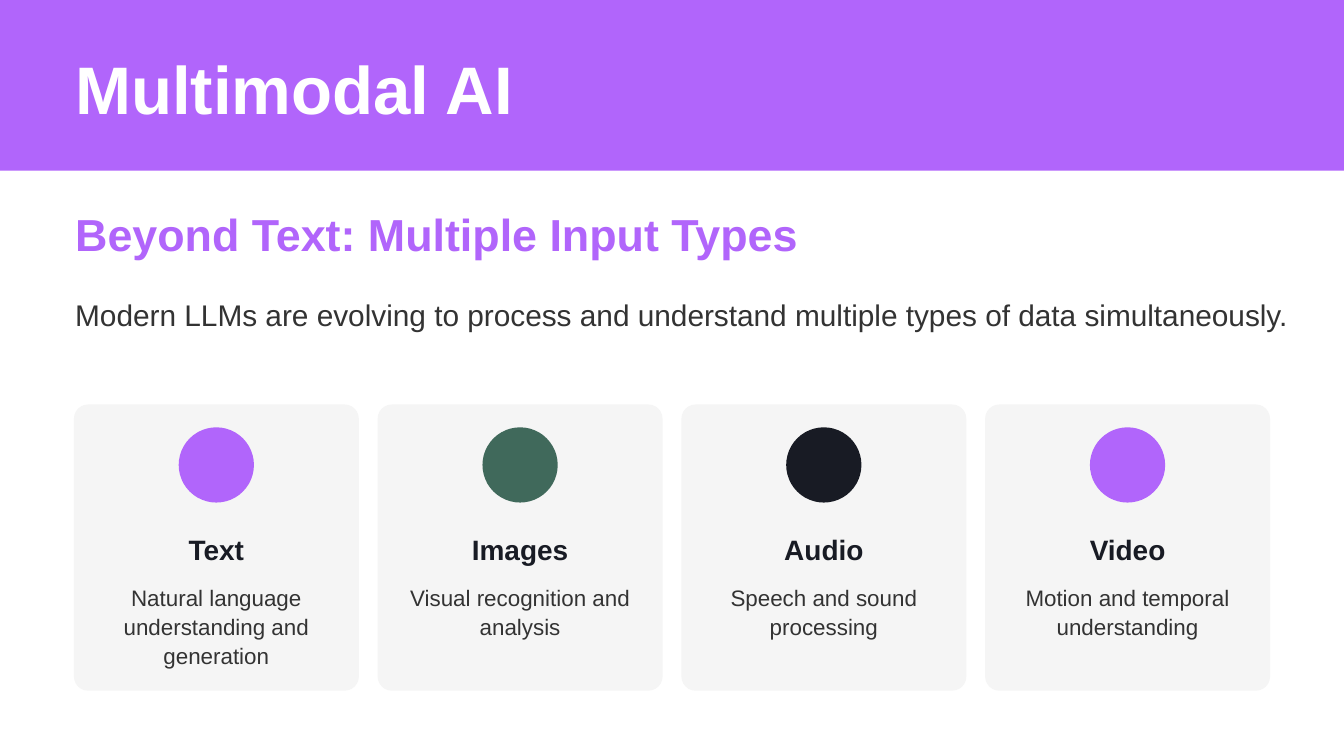
"""Build the Multimodal AI slide with four input type cards."""
from pptx import Presentation
from pptx.dml.color import RGBColor
from pptx.enum.shapes import MSO_SHAPE as Kind
from pptx.enum.text import PP_ALIGN as Align
from pptx.util import Inches, Pt

PURPLE, GREEN, DARK = "B165FB", "40695B", "181B24"
WHITE, GREY, PALE = "FFFFFF", "333333", "F5F5F5"

deck = Presentation()
deck.slide_width, deck.slide_height = Inches(10), Inches(10 * 9 / 16)
slide = deck.slides.add_slide(deck.slide_layouts[6])


def add_block(kind, x, y, w, h, color):
    block = slide.shapes.add_shape(kind, Inches(x), Inches(y), Inches(w), Inches(h))
    block.shadow.inherit = False
    block.fill.solid()
    block.fill.fore_color.rgb = RGBColor.from_string(color)
    block.line.fill.background()
    return block


def add_text(text, x, y, w, h, size, color, bold=False, align=Align.LEFT, line=None, after=0):
    frame = slide.shapes.add_textbox(Inches(x), Inches(y), Inches(w), Inches(h)).text_frame
    frame.word_wrap = True
    frame.margin_left = frame.margin_right = frame.margin_top = frame.margin_bottom = 0
    para = frame.paragraphs[0]
    para.text = text
    para.alignment = align
    para.space_after = Pt(after)
    if line:
        para.line_spacing = Pt(line)
    font = para.font
    font.name, font.size, font.bold = "Arial", Pt(size), bold
    font.color.rgb = RGBColor.from_string(color)


add_block(Kind.RECTANGLE, 0, 0, 10, 1.27, PURPLE)
add_text("Multimodal AI", 0.56, 0.35, 9.07, 0.57, 36, WHITE, bold=True)
add_text("Beyond Text: Multiple Input Types", 0.56, 1.54, 9.07, 0.39, 24, PURPLE, bold=True, after=15)
add_text("Modern LLMs are evolving to process and understand multiple types of data simultaneously.",
         0.56, 2.14, 9.07, 0.67, 16, GREY, line=24, after=15)

cards = [
    ("Text", "Natural language understanding and generation", PURPLE, 0.65),
    ("Images", "Visual recognition and analysis", GREEN, 0.43),
    ("Audio", "Speech and sound processing", DARK, 0.43),
    ("Video", "Motion and temporal understanding", PURPLE, 0.43),
]
for i, (name, note, color, height) in enumerate(cards):
    x = 0.55 + 2.26 * i
    card = add_block(Kind.ROUNDED_RECTANGLE, x, 3.01, 2.12, 2.13, PALE)
    card.adjustments[0] = 0.05
    dot = add_block(Kind.ROUNDED_RECTANGLE, x + 0.78, 3.18, 0.56, 0.56, color)
    dot.adjustments[0] = 0.5
    add_text(name, x + 0.15, 3.9, 1.82, 0.31, 15, DARK, bold=True, align=Align.CENTER, line=22.5, after=8)
    add_text(note, x + 0.15, 4.33, 1.82, height, 12, GREY, align=Align.CENTER, line=15.6)

deck.save("out.pptx")
